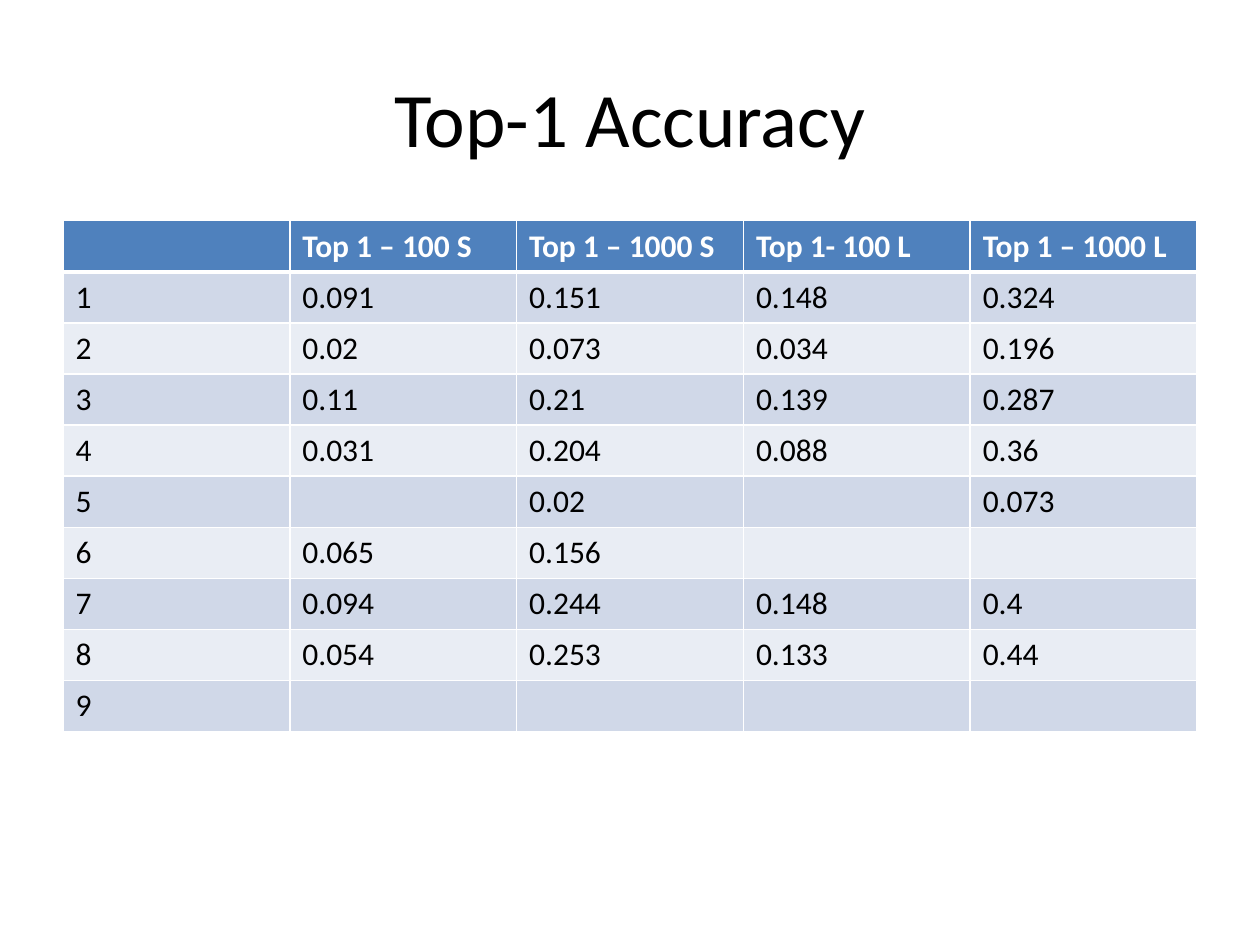
from dataclasses import dataclass

from lxml.etree import SubElement
from pptx import Presentation
from pptx.dml.color import RGBColor
from pptx.enum.text import MSO_ANCHOR, PP_ALIGN
from pptx.oxml.ns import qn
from pptx.util import Cm, Pt

FONT = "Calibri"
WHITE, BLACK = "FFFFFF", "000000"


@dataclass(frozen=True)
class RowStyle:
    fill: str
    text: str
    bold: bool
    borders: dict[str, float]  # side letter -> width in points


HEADER = RowStyle("4F81BD", WHITE, True, {"L": 1, "R": 1, "T": 1, "B": 3})
BODY_BORDERS = {"L": 1, "R": 1, "B": 1}
BANDS = (
    RowStyle("D0D8E8", BLACK, False, BODY_BORDERS),
    RowStyle("E9EDF4", BLACK, False, BODY_BORDERS),
)

ROWS = [
    ("", "Top 1 – 100 S", "Top 1 – 1000 S", "Top 1- 100 L", "Top 1 – 1000 L"),
    ("1", "0.091", "0.151", "0.148", "0.324"),
    ("2", "0.02", "0.073", "0.034", "0.196"),
    ("3", "0.11", "0.21", "0.139", "0.287"),
    ("4", "0.031", "0.204", "0.088", "0.36"),
    ("5", "", "0.02", "", "0.073"),
    ("6", "0.065", "0.156", "", ""),
    ("7", "0.094", "0.244", "0.148", "0.4"),
    ("8", "0.054", "0.253", "0.133", "0.44"),
    ("9", "", "", "", ""),
]


def color(value: str) -> RGBColor:
    return RGBColor.from_string(value)


def format_runs(p, size: float, value: str, bold: bool = False) -> None:
    for r in p.runs:
        r.font.name = FONT
        r.font.size = Pt(size)
        r.font.bold = bold
        r.font.color.rgb = color(value)


def add_borders(cell, borders: dict[str, float]) -> None:
    tc_pr = cell._tc.get_or_add_tcPr()
    for side, width in borders.items():
        ln = SubElement(tc_pr, qn(f"a:ln{side}"), w=str(Pt(width)))
        fill = SubElement(ln, qn("a:solidFill"))
        SubElement(fill, qn("a:srgbClr"), val=WHITE)


def draw_cell(cell, text: str, style: RowStyle) -> None:
    # Borders come before the fill in the cell properties
    add_borders(cell, style.borders)
    cell.fill.solid()
    cell.fill.fore_color.rgb = color(style.fill)
    if text:
        p = cell.text_frame.paragraphs[0]
        p.text = text
        format_runs(p, 18, style.text, style.bold)


def add_title(slide, text: str) -> None:
    sp = slide.shapes.title
    sp.left, sp.top, sp.width, sp.height = Cm(1.27), Cm(0.76), Cm(22.86), Cm(3.18)
    tf = sp.text_frame
    tf.text = text
    tf.vertical_anchor = MSO_ANCHOR.MIDDLE
    p = tf.paragraphs[0]
    p.alignment = PP_ALIGN.CENTER
    format_runs(p, 44, BLACK)


def add_accuracy_table(slide, rows: list[tuple[str, ...]]) -> None:
    table = slide.shapes.add_table(
        len(rows), len(rows[0]), Cm(1.27), Cm(4.45), Cm(22.86), Cm(1.03) * len(rows)
    ).table
    for i, row in enumerate(rows):
        style = BANDS[(i - 1) % 2] if i else HEADER
        for j, text in enumerate(row):
            draw_cell(table.cell(i, j), text, style)


def main() -> None:
    prs = Presentation()
    prs.slide_width, prs.slide_height = Cm(25.4), Cm(19.05)

    # Title Only layout
    slide = prs.slides.add_slide(prs.slide_layouts[5])
    add_title(slide, "Top-1 Accuracy")
    add_accuracy_table(slide, ROWS)

    prs.save("out.pptx")


if __name__ == "__main__":
    main()
